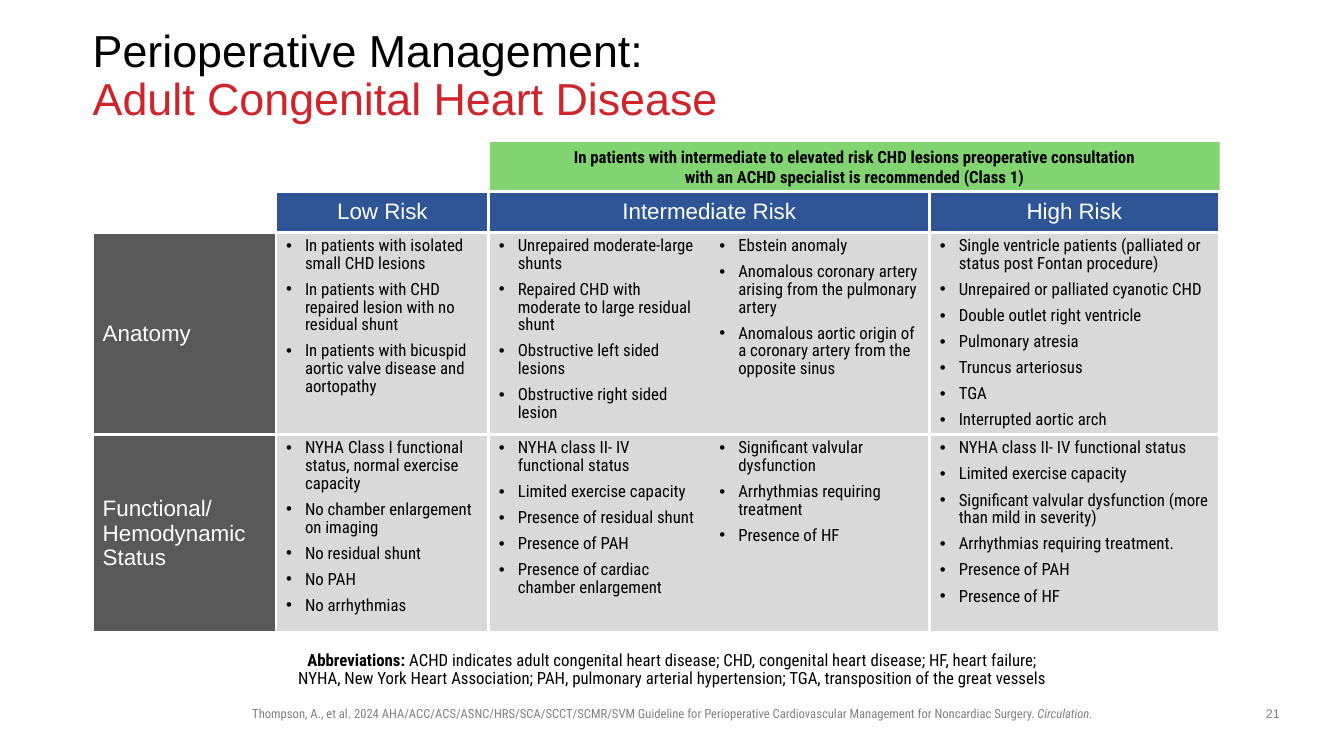
from lxml import etree
from pptx import Presentation
from pptx.dml.color import RGBColor
from pptx.enum.shapes import MSO_SHAPE
from pptx.enum.text import MSO_ANCHOR, MSO_AUTO_SIZE, PP_ALIGN
from pptx.oxml.ns import qn
from pptx.util import Pt

CENTER, LEFT = PP_ALIGN.CENTER, PP_ALIGN.LEFT
TOP, MIDDLE, BOTTOM = MSO_ANCHOR.TOP, MSO_ANCHOR.MIDDLE, MSO_ANCHOR.BOTTOM
RECTANGLE = MSO_SHAPE.RECTANGLE
NO_AUTOFIT = MSO_AUTO_SIZE.NONE
ARIAL, CONDENSED = "Arial", "Roboto Condensed"
BLACK, WHITE, RED, GRAY = "000000", "FFFFFF", "CF2429", "808080"
GREEN, BLUE, DARK, LIGHT = "82D472", "2F5597", "595959", "D9D9D9"

COLUMN_WIDTHS = [131, 152, 157.5, 157.5, 206.5]
ROW_HEIGHTS = [28, 144, 141]
RISKS = {1: "Low Risk", 2: "Intermediate Risk", 4: "High Risk"}
CRITERIA = [
    (["Anatomy"], [
        ["In patients with isolated small CHD lesions",
         "In patients with CHD repaired lesion with no residual shunt",
         "In patients with bicuspid aortic valve disease and aortopathy"],
        ["Unrepaired moderate-large shunts",
         "Repaired CHD with moderate to large residual shunt",
         "Obstructive left sided lesions",
         "Obstructive right sided lesion"],
        ["Ebstein anomaly",
         "Anomalous coronary artery arising from the pulmonary artery",
         "Anomalous aortic origin of a coronary artery from the opposite sinus"],
        ["Single ventricle patients (palliated or status post Fontan procedure)",
         "Unrepaired or palliated cyanotic CHD",
         "Double outlet right ventricle",
         "Pulmonary atresia",
         "Truncus arteriosus",
         "TGA",
         "Interrupted aortic arch"],
    ]),
    (["Functional/", "Hemodynamic Status"], [
        ["NYHA Class I functional status, normal exercise capacity",
         "No chamber enlargement on imaging",
         "No residual shunt",
         "No PAH",
         "No arrhythmias"],
        ["NYHA class II- IV functional status",
         "Limited exercise capacity",
         "Presence of residual shunt",
         "Presence of PAH",
         "Presence of cardiac chamber enlargement"],
        ["Significant valvular dysfunction",
         "Arrhythmias requiring treatment",
         "Presence of HF"],
        ["NYHA class II- IV functional status",
         "Limited exercise capacity",
         "Significant valvular dysfunction (more than mild in severity)",
         "Arrhythmias requiring treatment.",
         "Presence of PAH",
         "Presence of HF"],
    ]),
]


def color(value):
    return RGBColor.from_string(value)


def add_span(para, text, size, font, ink, bold=False, italic=False):
    span = para.add_run()
    span.text = text
    span.font.size = Pt(size)
    span.font.name = font
    span.font.color.rgb = color(ink)
    span.font.bold = bold
    span.font.italic = italic


def add_lines(para, lines, *style, **flags):
    """Add one run per line, with line breaks between them."""
    for index, line in enumerate(lines):
        if index:
            para.add_line_break()
        add_span(para, line, *style, **flags)


def add_text_box(slide, left, top, width, height, anchor=TOP):
    """Add a wrapping text box and return its centred first paragraph."""
    box = slide.shapes.add_textbox(Pt(left), Pt(top), Pt(width), Pt(height))
    box.text_frame.word_wrap = True
    box.text_frame.vertical_anchor = anchor
    para = box.text_frame.paragraphs[0]
    para.alignment = CENTER
    return para


def set_title(slide):
    title = slide.shapes.title
    title.left, title.top, title.width, title.height = Pt(66.2), Pt(28.8), Pt(828), Pt(52)
    frame = title.text_frame
    frame.auto_size = NO_AUTOFIT
    frame.word_wrap = True
    frame.vertical_anchor = MIDDLE
    frame.margin_left = frame.margin_right = frame.margin_top = frame.margin_bottom = 0
    para = frame.paragraphs[0]
    para.alignment = LEFT
    para.line_spacing = 0.9
    add_span(para, "Perioperative Management: ", 32, ARIAL, BLACK)
    para.add_line_break()
    add_span(para, "Adult Congenital Heart Disease", 32, ARIAL, RED)


def add_banner(slide):
    banner = slide.shapes.add_shape(RECTANGLE, Pt(349.9), Pt(101.5), Pt(521.3), Pt(35.3))
    banner.shadow.inherit = False
    banner.fill.solid()
    banner.fill.fore_color.rgb = color(GREEN)
    banner.line.fill.background()
    banner.text_frame.word_wrap = True
    banner.text_frame.vertical_anchor = MIDDLE
    para = banner.text_frame.paragraphs[0]
    para.alignment = CENTER
    add_lines(para, [
        "In patients with intermediate to elevated risk CHD lesions preoperative consultation",
        "with an ACHD specialist is recommended (Class 1)",
    ], 12, CONDENSED, BLACK, bold=True)


def add_borders(cell, sides):
    """Draw white borders; sides is a string of L, R, T and B in that order."""
    properties = cell._tc.get_or_add_tcPr()
    for side in "LRTB":
        line = etree.SubElement(properties, qn(f"a:ln{side}"), w=str(Pt(2.25)))
        if side in sides:
            fill = etree.SubElement(line, qn("a:solidFill"))
            etree.SubElement(fill, qn("a:srgbClr"), val=WHITE)
        else:
            etree.SubElement(line, qn("a:noFill"))


def fill_cell(cell, fill):
    cell.fill.solid()
    cell.fill.fore_color.rgb = color(fill)


def write_label(cell, lines, fill, alignment=LEFT):
    fill_cell(cell, fill)
    cell.vertical_anchor = MIDDLE
    para = cell.text_frame.paragraphs[0]
    para.alignment = alignment
    add_lines(para, lines, 16, ARIAL, WHITE)


def write_bullets(cell, items):
    fill_cell(cell, LIGHT)
    frame = cell.text_frame
    for index, item in enumerate(items):
        para = frame.add_paragraph() if index else frame.paragraphs[0]
        properties = para._p.get_or_add_pPr()
        properties.set("marL", str(Pt(13.5)))
        properties.set("indent", str(-Pt(13.5)))
        etree.SubElement(properties, qn("a:buFont"), typeface=ARIAL)
        etree.SubElement(properties, qn("a:buChar"), char="•")
        para.line_spacing = 0.9
        para.space_after = Pt(6)
        add_span(para, item, 12, CONDENSED, BLACK)


def add_risk_table(slide):
    table = slide.shapes.add_table(
        len(ROW_HEIGHTS), len(COLUMN_WIDTHS), Pt(66.2), Pt(136.8),
        Pt(sum(COLUMN_WIDTHS)), Pt(sum(ROW_HEIGHTS))).table
    table.first_row = table.horz_banding = False
    for column, width in zip(table.columns, COLUMN_WIDTHS):
        column.width = Pt(width)
    for row, height in zip(table.rows, ROW_HEIGHTS):
        row.height = Pt(height)
        for index, cell in enumerate(row.cells):
            add_borders(cell, {2: "LTB", 3: "RTB"}.get(index, "LRTB"))
            cell.fill.background()
    table.cell(0, 2).merge(table.cell(0, 3))
    for column, risk in RISKS.items():
        write_label(table.cell(0, column), [risk], BLUE, CENTER)
    for row, (label, groups) in enumerate(CRITERIA, 1):
        write_label(table.cell(row, 0), label, DARK)
        for column, items in enumerate(groups, 1):
            write_bullets(table.cell(row, column), items)


def add_abbreviations(slide):
    para = add_text_box(slide, 131.8, 462.2, 697, 33.1, BOTTOM)
    para.line_spacing = 0.9
    add_span(para, "Abbreviations: ", 12, CONDENSED, BLACK, bold=True)
    add_lines(para, [
        "ACHD indicates adult congenital heart disease; CHD, congenital heart disease; "
        "HF, heart failure;",
        "NYHA, New York Heart Association; PAH, pulmonary arterial hypertension; "
        "TGA, transposition of the great vessels",
    ], 12, CONDENSED, BLACK)


def add_footer(slide):
    citation = add_text_box(slide, 170, 500.4, 620.6, 18)
    add_span(citation, "Thompson, A., et al. 2024 AHA/ACC/ACS/ASNC/HRS/SCA/SCCT/SCMR/SVM Guideline "
             "for Perioperative Cardiovascular Management for Noncardiac Surgery. ",
             9, CONDENSED, GRAY)
    add_span(citation, "Circulation.", 9, CONDENSED, GRAY, italic=True)
    number = add_text_box(slide, 894.2, 500.4, 30.2, 18.7)
    add_span(number, "21", 9, ARIAL, GRAY)


def main():
    deck = Presentation()
    deck.slide_width, deck.slide_height = Pt(960), Pt(540)
    slide = deck.slides.add_slide(deck.slide_layouts[5])
    set_title(slide)
    add_banner(slide)
    add_risk_table(slide)
    add_abbreviations(slide)
    add_footer(slide)
    deck.save("out.pptx")


if __name__ == "__main__":
    main()
